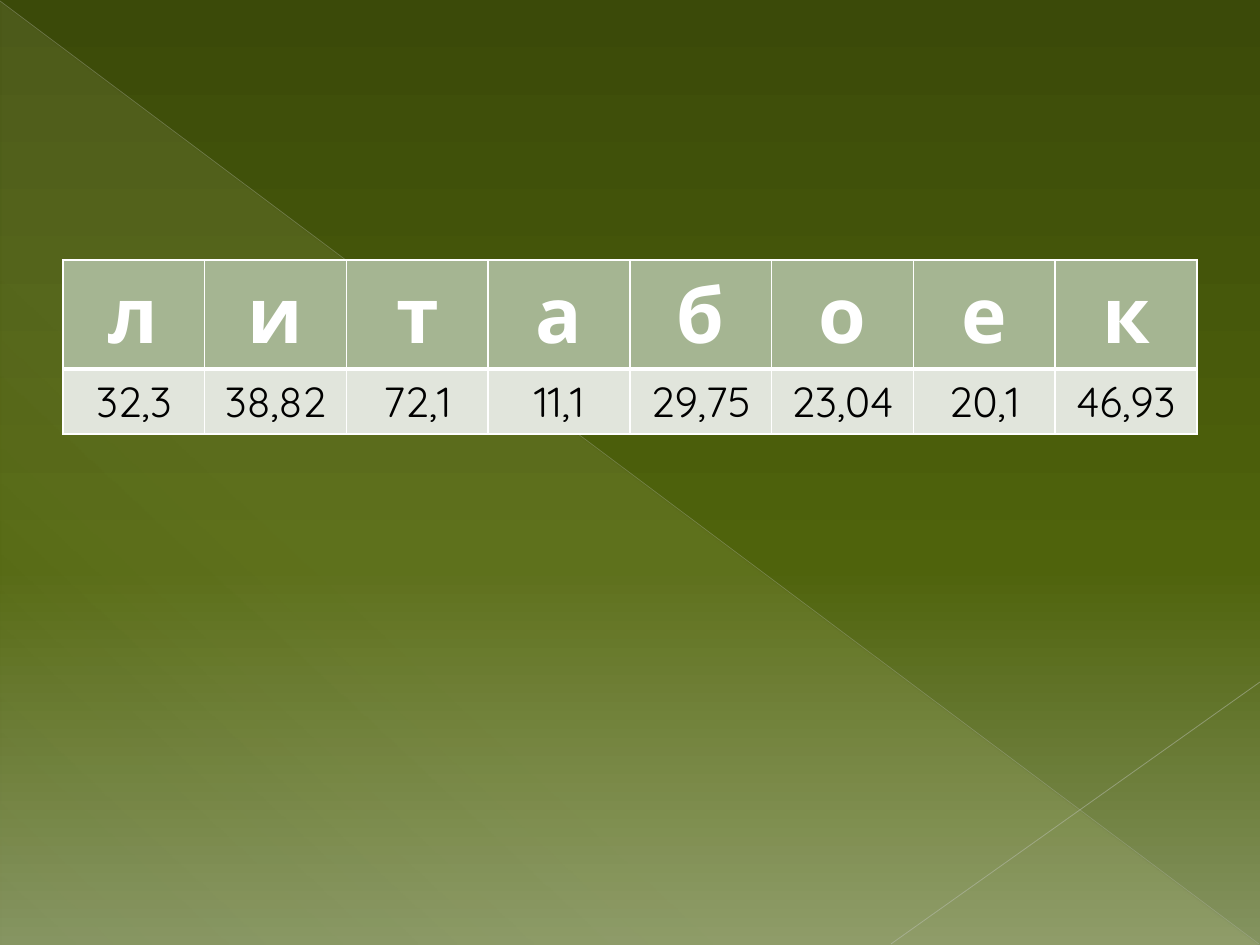
import pptx
import pptx.dml.color
import pptx.enum.shapes
import pptx.enum.text
import pptx.oxml
import pptx.oxml.ns
import pptx.util

PX_PER_INCH = 126
FONT = "Quicksand"
WHITE = "FFFFFF"
LETTERS = ["л", "и", "т", "а", "б", "о", "е", "к"]
VALUES = ["32,3", "38,82", "72,1", "11,1", "29,75", "23,04", "20,1", "46,93"]


def px(length):
    return pptx.util.Emu(round(length * 914400 / PX_PER_INCH))


def color(hex_string):
    return pptx.dml.color.RGBColor.from_string(hex_string)


def xml(markup):
    """Parse one element whose first tag lacks its namespace declaration."""
    tag, rest = markup.split(" ", 1)
    return pptx.oxml.parse_xml(f"{tag} {pptx.oxml.ns.nsdecls('a')} {rest}")


def set_gradient(fill, element, stops, angle):
    """Swap the solid fill of an element for a gradient of (position, colour, opacity)."""
    fill.solid()
    solid = element.xpath(".//p:bgPr/a:solidFill | .//p:spPr/a:solidFill")[0]
    stop_list = "".join(
        f'<a:gs pos="{position * 1000}"><a:srgbClr val="{hex_string}">'
        f'<a:alpha val="{opacity * 1000}"/></a:srgbClr></a:gs>'
        for position, hex_string, opacity in stops
    )
    gradient = xml(
        f'<a:gradFill rotWithShape="1"><a:gsLst>{stop_list}</a:gsLst>'
        f'<a:lin ang="{angle * 60000}" scaled="0"/></a:gradFill>'
    )
    solid.getparent().replace(solid, gradient)


def add_triangle(slide, left, top, width, height):
    triangle = slide.shapes.add_shape(
        pptx.enum.shapes.MSO_SHAPE.RIGHT_TRIANGLE,
        px(left), px(top), px(width), px(height),
    )
    triangle.shadow.inherit = False
    stops = [(0, "FEFAC9", 10), (70, "FEFAC9", 8), (100, "FEFAC9", 1)]
    set_gradient(triangle.fill, triangle.element, stops, 133)
    triangle.line.fill.background()


def add_line(slide, start, end, hex_string, width, opacity):
    line = slide.shapes.add_connector(
        pptx.enum.shapes.MSO_CONNECTOR.STRAIGHT,
        px(start[0]), px(start[1]), px(end[0]), px(end[1]),
    )
    line.line.color.rgb = color(hex_string)
    line.line.width = pptx.util.Pt(width)
    line.element.xpath(".//a:ln//a:srgbClr")[0].append(
        xml(f'<a:alpha val="{opacity * 1000}"/>')
    )
    line.element.spPr.append(xml("<a:effectLst />"))


def set_borders(cell, top, bottom):
    """Draw white borders; the side borders are 1 pt."""
    properties = cell._tc.get_or_add_tcPr()
    for index, (side, width) in enumerate(
        [("L", 1), ("R", 1), ("T", top), ("B", bottom)]
    ):
        properties.insert(index, xml(
            f'<a:ln{side} w="{pptx.util.Pt(width)}"><a:solidFill>'
            f'<a:srgbClr val="{WHITE}"/></a:solidFill></a:ln{side}>'
        ))


def fill_row(table, row, texts, size, bold, text_color, cell_color, borders):
    for column, text in enumerate(texts):
        cell = table.cell(row, column)
        cell.fill.solid()
        cell.fill.fore_color.rgb = color(cell_color)
        set_borders(cell, *borders)
        paragraph = cell.text_frame.paragraphs[0]
        paragraph.alignment = pptx.enum.text.PP_ALIGN.CENTER
        run = paragraph.add_run()
        run.text = text
        run.font.name = FONT
        run.font.size = pptx.util.Pt(size)
        run.font.bold = bold
        run.font.color.rgb = color(text_color)


def add_letter_table(slide):
    row_heights = [108, 65]
    table = slide.shapes.add_table(
        len(row_heights), len(LETTERS),
        px(63), px(260), px(1134), px(sum(row_heights)),
    ).table
    for row, height in zip(table.rows, row_heights):
        row.height = px(height)
    fill_row(table, 0, LETTERS, 44, True, WHITE, "A5B592", (1, 3))
    fill_row(table, 1, VALUES, 24, False, "000000", "E1E5DC", (3, 1))


def main():
    presentation = pptx.Presentation()
    presentation.slide_width = px(1260)
    presentation.slide_height = px(945)
    slide = presentation.slides.add_slide(presentation.slide_layouts[6])

    # Backdrop
    stops = [(0, "3B4A09", 100), (60, "4F630C", 100), (100, "849360", 100)]
    set_gradient(slide.background.fill, slide.element, stops, 90)
    add_triangle(slide, 1, 2, 1258, 943)
    add_line(slide, (0, 1), (1259, 944), "BABDB3", 0.39, 35)
    add_line(slide, (1260, 682), (891, 944), "C1C4BC", 0.47, 45)

    # Letters and their numbers
    add_letter_table(slide)

    presentation.save("out.pptx")


if __name__ == "__main__":
    main()
